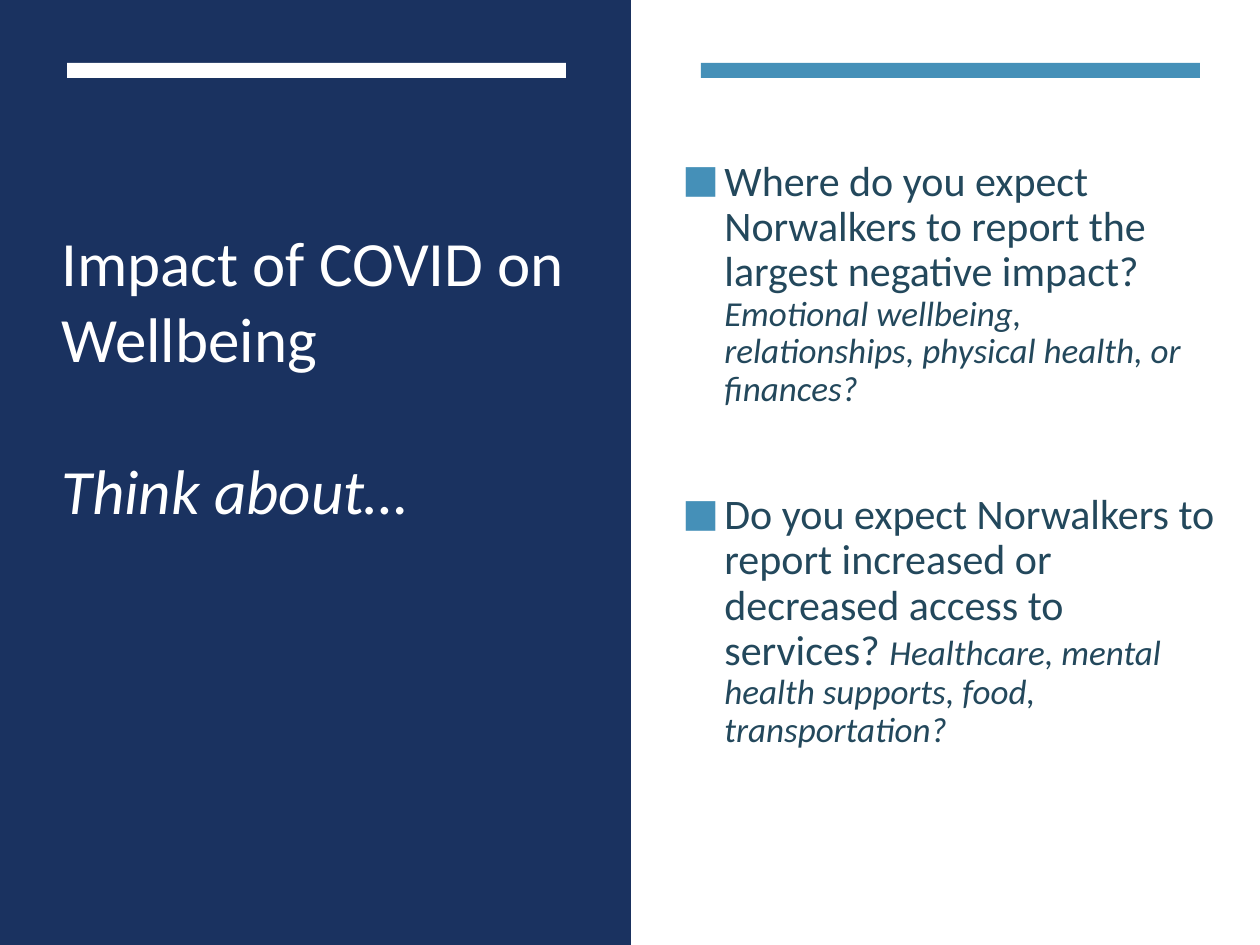
from dataclasses import dataclass

from lxml import etree
from pptx import Presentation
from pptx import util as u
from pptx.dml.color import RGBColor
from pptx.enum import shapes, text
from pptx.oxml import ns

PX = u.Inches(1) / 126
WHITE, NAVY, BLUE, SLATE = "FFFFFF", "1A3260", "4590B8", "23485C"
FONT = "Calibri"


@dataclass
class Box:
    left: int
    top: int
    width: int
    height: int

    def emu(self) -> list[int]:
        return [round(v * PX) for v in (self.left, self.top, self.width, self.height)]


@dataclass
class Phrase:
    wording: str
    size: int
    colour: str
    italic: bool = False


@dataclass
class Question:
    prompt: str
    options: str
    space_before: int


def rgb(colour: str) -> RGBColor:
    return RGBColor.from_string(colour)


def apply(target, values: dict) -> None:
    for name, value in values.items():
        setattr(target, name, value)


def add_block(slide, box: Box, colour: str) -> None:
    block = slide.shapes.add_shape(shapes.MSO_SHAPE.RECTANGLE, *box.emu())
    block.shadow.inherit = False
    block.fill.solid()
    block.fill.fore_color.rgb = rgb(colour)
    block.line.fill.background()


def add_frame(slide, box: Box):
    frame = slide.shapes.add_textbox(*box.emu()).text_frame
    apply(frame, {"word_wrap": True, "vertical_anchor": text.MSO_ANCHOR.MIDDLE})
    return frame


def add_paragraph(frame, phrases: list[Phrase], **spacing):
    first = frame.paragraphs[0]
    paragraph = frame.add_paragraph() if first.runs else first
    apply(paragraph, spacing)
    for phrase in phrases:
        run = paragraph.add_run()
        run.text = phrase.wording
        apply(run.font, {"name": FONT, "size": u.Pt(phrase.size), "italic": phrase.italic})
        run.font.color.rgb = rgb(phrase.colour)
    return paragraph


def add_bullet(paragraph, indent: int) -> None:
    props = paragraph._p.get_or_add_pPr()
    props.set("marL", str(round(indent * PX)))
    props.set("indent", str(round(-indent * PX)))
    colour = etree.SubElement(props, ns.qn("a:buClr"))
    etree.SubElement(colour, ns.qn("a:srgbClr"), val=BLUE)
    etree.SubElement(props, ns.qn("a:buSzPct"), val="92000")
    etree.SubElement(props, ns.qn("a:buFont"), typeface=FONT)
    etree.SubElement(props, ns.qn("a:buChar"), char="■")


BLOCKS = [
    (Box(0, 0, 1260, 945), WHITE),
    (Box(0, 0, 631, 945), NAVY),
    (Box(67, 63, 499, 15), WHITE),
    (Box(701, 63, 499, 15), BLUE),
]
QUESTIONS = [
    Question(
        "Where do you expect Norwalkers to report the largest negative impact? ",
        "Emotional wellbeing, relationships, physical health, or finances?",
        5,
    ),
    Question(
        "Do you expect Norwalkers to report increased or decreased access to services? ",
        "Healthcare, mental health supports, food, transportation?",
        42,
    ),
]


def main() -> None:
    deck = Presentation()
    apply(deck, {"slide_width": u.Inches(10), "slide_height": u.Inches(7.5)})
    slide = deck.slides.add_slide(deck.slide_layouts[6])
    for box, colour in BLOCKS:
        add_block(slide, box, colour)

    title = add_frame(slide, Box(49, 239, 533, 273))
    add_paragraph(title, [Phrase("Impact of COVID on Wellbeing", 36, WHITE)])
    add_paragraph(title, [Phrase("Think about…", 36, WHITE, True)], space_before=u.Pt(44))

    body = add_frame(slide, Box(670, 102, 562, 706))
    for question in QUESTIONS:
        phrases = [Phrase(question.prompt, 24, SLATE), Phrase(question.options, 20, SLATE, True)]
        paragraph = add_paragraph(
            body,
            phrases,
            line_spacing=0.9,
            space_before=u.Pt(question.space_before),
            space_after=u.Pt(6),
        )
        add_bullet(paragraph, 42)
    deck.save("out.pptx")


if __name__ == "__main__":
    main()
